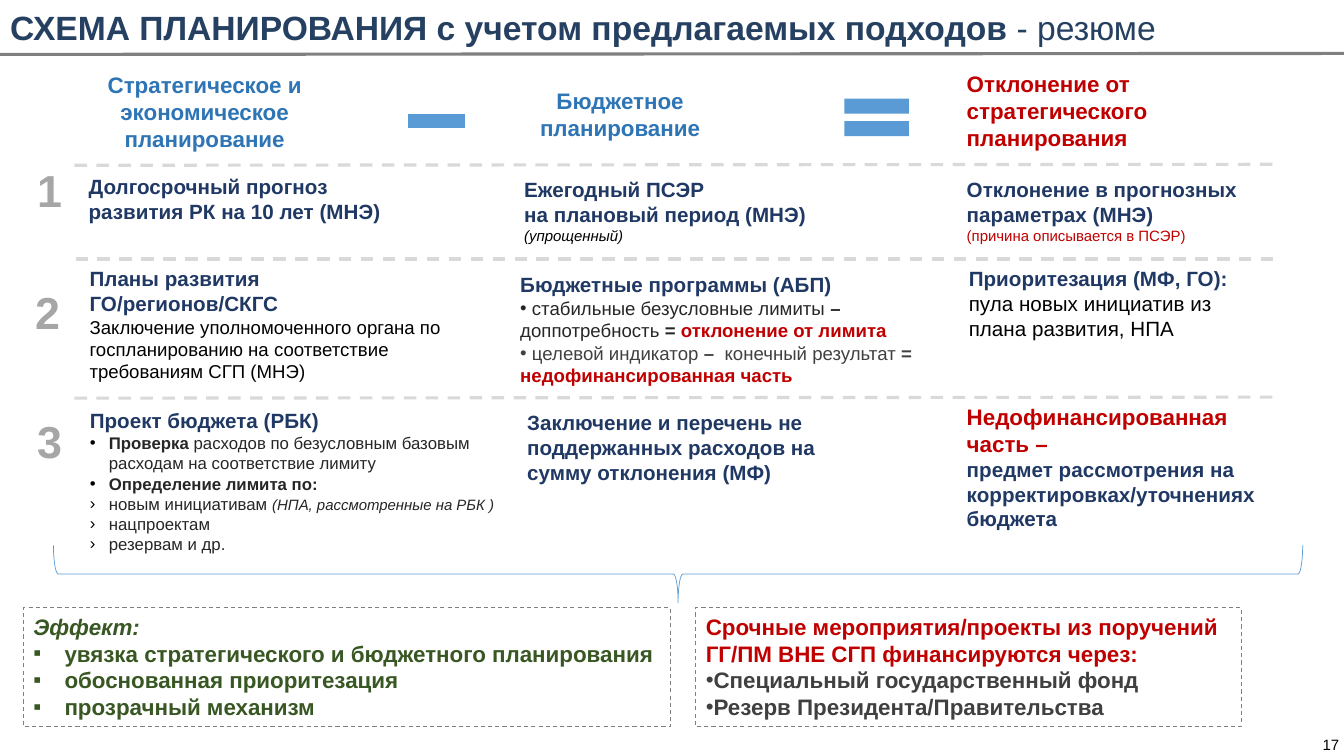
from lxml import etree
from pptx import Presentation
from pptx import util as u
from pptx.dml.color import RGBColor
from pptx.enum import dml, shapes, text
from pptx.oxml import ns

COLORS = {
    "title": "254061", "navy": "203864", "blue": "2E75B6", "sign": "5B9BD5",
    "red": "C00000", "green": "385723", "black": "000000", "ink": "262626",
    "dark": "404040", "gray": "808080", "number": "A6A6A6", "dash": "D9D9D9",
    "white": "FFFFFF",
}
HEAD, BODY, NOTE, ITEM, LARGE = 14.7, 13.3, 10.7, 12, 16


def color(name):
    return RGBColor.from_string(COLORS[name])


def assign(target, values):
    for name, value in values.items():
        setattr(target, name, value)


def line(*spans, bullet=None, bullet_color="black", indent=0):
    return spans, bullet, bullet_color, indent


def set_bullet(para, bullet, bullet_color, indent):
    props = para._p.get_or_add_pPr()
    props.set("marL", str(u.Inches(indent)))
    props.set("indent", str(-u.Inches(indent)))
    if not bullet:
        etree.SubElement(props, ns.qn("a:buNone"))
        return
    paint = etree.SubElement(props, ns.qn("a:buClr"))
    etree.SubElement(paint, ns.qn("a:srgbClr"), val=COLORS[bullet_color])
    etree.SubElement(props, ns.qn("a:buFont"), typeface="Arial")
    etree.SubElement(props, ns.qn("a:buChar"), char=bullet)


def add_span(para, words, size, shade, style=""):
    for index, part in enumerate(words.split("\n")):
        if index:
            para.add_line_break()
        span = para.add_run()
        span.text = part
        assign(span.font, {"name": "Arial", "size": u.Pt(size),
                           "bold": "b" in style, "italic": "i" in style})
        span.font.color.rgb = color(shade)


def write(box, lines, align=text.PP_ALIGN.LEFT, **frame_values):
    frame = box.text_frame
    assign(frame, {"word_wrap": True, "vertical_anchor": text.MSO_ANCHOR.TOP,
                   "auto_size": text.MSO_AUTO_SIZE.SHAPE_TO_FIT_TEXT,
                   **frame_values})
    for index, (spans, bullet, bullet_color, indent) in enumerate(lines):
        para = frame.paragraphs[0] if index == 0 else frame.add_paragraph()
        assign(para, {"alignment": align, "space_before": u.Pt(0),
                      "space_after": u.Pt(0), "line_spacing": 1.0})
        set_bullet(para, bullet, bullet_color, indent)
        for span in spans:
            add_span(para, *span)


def outline(item, shade, width, dashed=False):
    item.line.color.rgb = color(shade)
    item.line.width = u.Pt(width)
    if dashed:
        item.line.dash_style = dml.MSO_LINE.DASH


def fill_placeholder(box, area, *lines, border=None):
    places = map(u.Inches, area)
    assign(box, dict(zip(("left", "top", "width", "height"), places)))
    if border:
        outline(box, border, 0.75, True)
    write(box, lines, auto_size=text.MSO_AUTO_SIZE.NONE)


def add_text(page, area, *lines, **options):
    box = page.shapes.add_textbox(*map(u.Inches, area))
    write(box, lines, **options)


def add_frame(page, area, *lines, **options):
    box = add_preset(page, shapes.MSO_SHAPE.RECTANGLE, area)
    outline(box, "white", 0.75, True)
    write(box, lines, **options)


def add_preset(page, kind, area, fill=None):
    item = page.shapes.add_shape(kind, *map(u.Inches, area))
    item.shadow.inherit = False
    if fill:
        item.fill.solid()
        item.fill.fore_color.rgb = color(fill)
        item.line.fill.background()
    else:
        item.fill.background()
    return item


def add_rule(page, ends, shade, dashed=False):
    rule = page.shapes.add_connector(
        shapes.MSO_CONNECTOR.STRAIGHT, *map(u.Inches, ends))
    outline(rule, shade, 2.25, dashed)
    etree.SubElement(rule._element.spPr, ns.qn("a:effectLst"))


def add_headings(page):
    center = text.PP_ALIGN.CENTER
    add_text(page, (0.69, 0.66, 2.68, 0.91), line(
        ("Стратегическое и экономическое планирование", LARGE, "blue", "b")), align=center)
    add_frame(page, (4.99, 0.82, 2.32, 0.64), line(
        ("Бюджетное планирование", LARGE, "blue", "b")), align=center)
    add_text(page, (9.49, 0.65, 2.93, 0.91), line(
        ("Отклонение от стратегического планирования", LARGE, "red", "b")))
    add_preset(page, shapes.MSO_SHAPE.MATH_MINUS, (3.94, 0.89, 0.78, 0.62), "sign")
    add_preset(page, shapes.MSO_SHAPE.MATH_EQUAL, (8.26, 0.85, 0.87, 0.63), "sign")


def add_stages(page, programs, budget):
    for number, left, top in (("1", 0.27, 1.57), ("2", 0.25, 2.78), ("3", 0.27, 4.06)):
        add_text(page, (left, top, 0.53, 0.64), line((number, 32, "number", "b")))
    for ends in ((12.62, 1.63, 0.67, 1.64), (12.63, 2.57, 0.69, 2.57),
                 (12.62, 3.94, 0.67, 3.95)):
        add_rule(page, ends, "dash", True)

    add_text(page, (0.78, 1.68, 3.19, 0.59), line(
        ("Долгосрочный прогноз развития РК на 10 лет (МНЭ)", HEAD, "navy", "b")))
    add_frame(page, (5.1, 1.71, 3.09, 0.77), line(
        ("Ежегодный ПСЭР \nна плановый период (МНЭ) ", HEAD, "navy", "b"),
        ("(упрощенный)", NOTE, "black", "i")))
    add_text(page, (9.49, 1.71, 3.37, 0.77),
             line(("Отклонение в прогнозных параметрах (МНЭ)", HEAD, "navy", "b")),
             line(("(причина описывается в ПСЭР)", NOTE, "red")))

    add_text(page, (0.79, 2.59, 3.76, 1.27),
             line(("Планы развития\nГО/регионов/СКГС", HEAD, "navy", "b")),
             line(("Заключение уполномоченного органа по госпланированию "
                   "на соответствие требованиям СГП (МНЭ)", BODY, "black")))
    fill_placeholder(
        programs, (5.06, 2.65, 4.3, 1.25),
        line(("Бюджетные программы (АБП)", HEAD, "navy", "b")),
        line((" стабильные безусловные лимиты ", BODY, "ink"), ("– ", BODY, "ink", "b"),
             ("доппотребность ", BODY, "ink"), ("= ", BODY, "ink", "b"),
             ("отклонение от лимита", BODY, "red", "b"), bullet="•", bullet_color="ink"),
        line((" целевой индикатор ", BODY, "dark"), ("–", BODY, "dark", "b"),
             ("  конечный результат ", BODY, "dark"), ("= ", BODY, "dark", "b"),
             ("недофинансированная часть", BODY, "red", "b"),
             bullet="•", bullet_color="dark"),
        border="white")
    add_text(page, (9.51, 2.59, 3.09, 0.84),
             line(("Приоритезация (МФ, ГО):", HEAD, "navy", "b")),
             line(("пула новых инициатив из плана развития, НПА", HEAD, "black")))

    checks = [("•", ("Проверка ", ITEM, "ink", "b"),
               ("расходов по безусловным базовым расходам на соответствие лимиту",
                ITEM, "ink")),
              ("•", ("Определение лимита по:", ITEM, "ink", "b")),
              ("›", ("новым инициативам ", ITEM, "ink"),
               ("(НПА, рассмотренные на РБК )", NOTE, "ink", "i")),
              ("›", ("нацпроектам", ITEM, "ink")),
              ("›", ("резервам и др.", ITEM, "ink"))]
    fill_placeholder(
        budget, (0.79, 4, 4.31, 1.56),
        line(("Проект бюджета (РБК)", HEAD, "navy", "b")),
        *(line(*spans, bullet=mark, indent=0.19) for mark, *spans in checks))
    add_text(page, (5.13, 4.02, 3.13, 0.84), line(
        ("Заключение и перечень не поддержанных расходов на сумму отклонения (МФ)",
         HEAD, "navy", "b")))
    add_text(page, (9.49, 3.95, 3.13, 1.38),
             line(("Недофинансированная часть –", LARGE, "red", "b")),
             line(("предмет рассмотрения на корректировках/уточнениях бюджета",
                   HEAD, "navy", "b")))


def add_results(page, effect, urgent):
    brace = add_preset(page, shapes.MSO_SHAPE.RIGHT_BRACE, (6.44, -0.5, 0.57, 12.39))
    brace.rotation = 90
    outline(brace, "sign", 0.5)
    benefits = ("увязка стратегического и бюджетного планирования",
                "обоснованная приоритезация", "прозрачный механизм")
    fill_placeholder(
        effect, (0.23, 6.03, 6.42, 1.18),
        line(("Эффект:", LARGE, "green", "bi")),
        *(line((benefit, LARGE, "green", "b"), bullet="▪", bullet_color="green", indent=0.31)
          for benefit in benefits), border="gray")
    sources = ("Специальный государственный фонд", "Резерв Президента/Правительства")
    fill_placeholder(
        urgent, (6.9, 6.03, 5.41, 1.18),
        line(("Срочные мероприятия/проекты из поручений ГГ/ПМ ВНЕ СГП "
              "финансируются через:", LARGE, "red", "b")),
        *(line((source, LARGE, "dark", "b"), bullet="•", bullet_color="dark")
          for source in sources), border="gray")


def main():
    deck = Presentation()
    assign(deck, {"slide_width": u.Inches(13.33), "slide_height": u.Inches(7.5)})
    page = deck.slides.add_slide(deck.slide_layouts.get_by_name("Comparison"))
    title, programs, budget, effect, urgent = page.placeholders
    fill_placeholder(title, (0, 0.02, 12.31, 0.5), line(
        ("СХЕМА ПЛАНИРОВАНИЯ с учетом предлагаемых подходов ", 24, "title", "b"),
        ("- резюме", 24, "title")))
    add_rule(page, (0, 0.54, 13.33, 0.53), "gray")
    add_headings(page)
    add_stages(page, programs, budget)
    add_results(page, effect, urgent)
    add_text(page, (12.93, 7.27, 0.54, 0.24), line(("17", NOTE, "black")),
             align=text.PP_ALIGN.CENTER, vertical_anchor=text.MSO_ANCHOR.MIDDLE,
             auto_size=text.MSO_AUTO_SIZE.NONE,
             margin_left=u.Inches(0.13), margin_right=u.Inches(0.13),
             margin_top=u.Inches(0.07), margin_bottom=u.Inches(0.07))
    deck.save("out.pptx")


if __name__ == "__main__":
    main()
